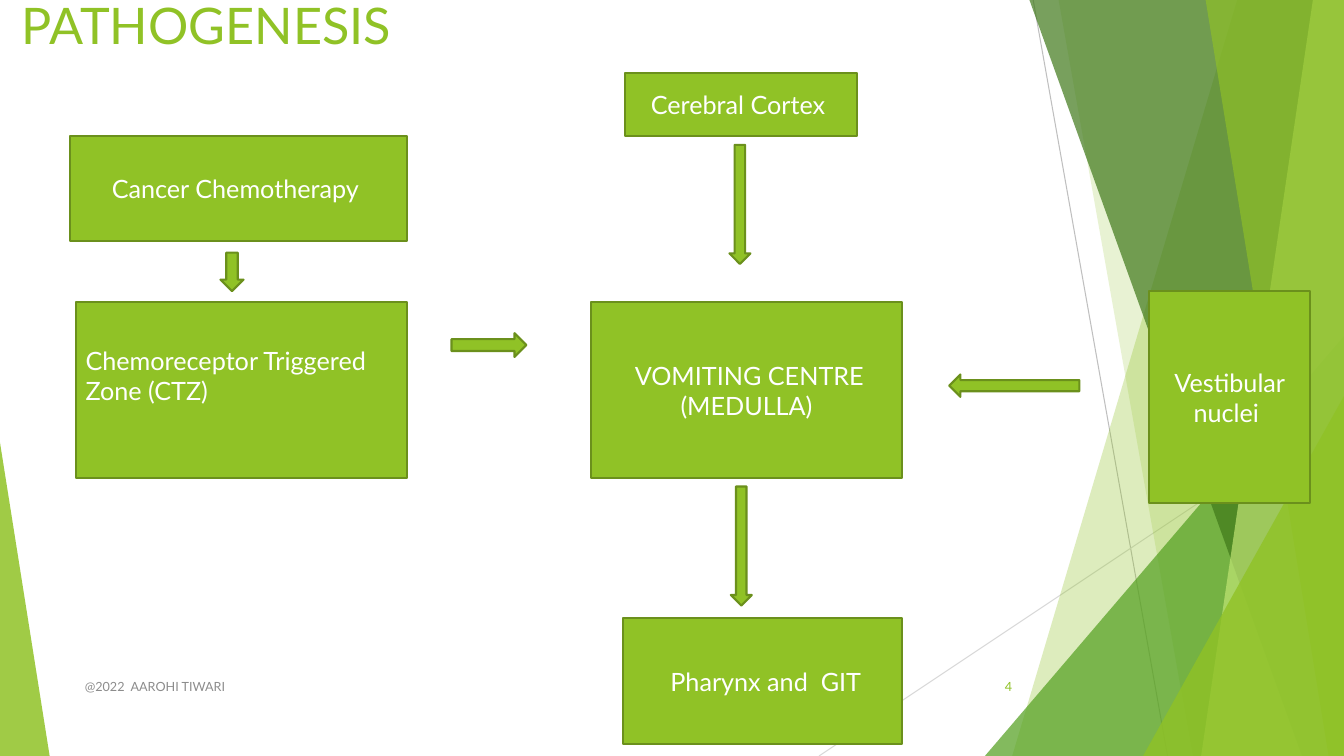
import pptx
import pptx.util
import pptx.dml.color
import pptx.enum.shapes
import pptx.enum.text
import pptx.oxml.ns
import lxml.etree

Pt = pptx.util.Pt
RGBColor = pptx.dml.color.RGBColor
Shape = pptx.enum.shapes.MSO_SHAPE
Align = pptx.enum.text.PP_ALIGN
Anchor = pptx.enum.text.MSO_ANCHOR
qn = pptx.oxml.ns.qn

GREEN = RGBColor(0x90, 0xC2, 0x26)
OUTLINE = RGBColor(0x6B, 0x90, 0x1C)
LEAF = RGBColor(0x54, 0xA0, 0x21)
FOREST = RGBColor(0x3F, 0x78, 0x19)
LIME = RGBColor(0xC0, 0xE4, 0x74)
WHITE = RGBColor(0xFF, 0xFF, 0xFF)
GREY = RGBColor(0x8C, 0x8C, 0x8C)
RULE_DARK = RGBColor(0xBF, 0xBF, 0xBF)
RULE_LIGHT = RGBColor(0xD9, 0xD9, 0xD9)


def write(box, lines, size, color, align, anchor):
    frame = box.text_frame
    for name, value in {"word_wrap": True, "vertical_anchor": anchor}.items():
        setattr(frame, name, value)
    for index, line in enumerate(lines):
        para = frame.add_paragraph() if index else frame.paragraphs[0]
        para.alignment = align
        span = para.add_run()
        span.text = line
        span.font.color.rgb = color
        for name, value in {"name": "Lato", "size": Pt(size)}.items():
            setattr(span.font, name, value)


def paint(shape, color, opacity=100):
    shape.shadow.inherit = False
    shape.fill.solid()
    shape.fill.fore_color.rgb = color
    if opacity < 100:
        tint = shape.fill._xPr.find(qn("a:solidFill"))[0]
        lxml.etree.SubElement(tint, qn("a:alpha"), val=str(opacity * 1000))
        shape.line.fill.background()
    else:
        shape.line.color.rgb = OUTLINE
        shape.line.width = Pt(1.5)


deck = pptx.Presentation()
deck.slide_width, deck.slide_height = Pt(960), Pt(540)
page = deck.slides.add_slide(deck.slide_layouts[5])
shapes = page.shapes

rules = [
    (738, 0, 834, 540, RULE_DARK),
    (960, 290, 585, 540, RULE_LIGHT),
]
for x1, y1, x2, y2, color in rules:
    rule = shapes.add_connector(
        pptx.enum.shapes.MSO_CONNECTOR.STRAIGHT, Pt(x1), Pt(y1), Pt(x2), Pt(y2)
    )
    rule.line.color.rgb = color
    rule.line.width = Pt(0.75)
    lxml.etree.SubElement(rule._element.spPr, qn("a:effectLst"))

facets = [
    ("band", (884, 723), GREEN, 30),
    ("band", (756, 852), GREEN, 20),
    ("triangle", (703.5, 240, 256.5, 300, 1), LEAF, 72),
    ("band", (735, 929.5), FOREST, 70),
    ("band", (938, 858), LIME, 70),
    ("band", (861, 949), GREEN, 65),
    ("triangle", (816.5, 283, 143.5, 257, 1), GREEN, 80),
    ("triangle", (0, 316, 35.5, 224, 0), GREEN, 85),
]
for kind, geometry, color, opacity in facets:
    if kind == "band":
        top_x, bottom_x = geometry
        outline = shapes.build_freeform(top_x, -0.6, scale=Pt(1))
        outline.add_line_segments([(960, -0.6), (960, 540), (bottom_x, 540)], close=True)
        facet = outline.convert_to_shape()
    else:
        *frame, apex = geometry
        facet = shapes.add_shape(Shape.ISOSCELES_TRIANGLE, *map(Pt, frame))
        facet.adjustments[0] = apex
    paint(facet, color, opacity)

title = shapes.title
title_place = {"left": Pt(8.5), "top": Pt(-7.5), "width": Pt(828), "height": Pt(104.5)}
for name, value in title_place.items():
    setattr(title, name, value)
write(title, ["PATHOGENESIS"], 36, GREEN, Align.LEFT, Anchor.TOP)

stages = [
    (["Cancer Chemotherapy "], 50, 97, 240.5, 75, Align.CENTER),
    (["Chemoreceptor Triggered Zone (CTZ)"], 54, 216, 237, 125.5, Align.LEFT),
    (["Cerebral Cortex "], 446.5, 52, 166, 45, Align.CENTER),
    ([" VOMITING CENTRE", "(MEDULLA)"], 422, 216, 222.5, 125.5, Align.CENTER),
    (["Vestibular nuclei "], 820.5, 208, 115.5, 151.5, Align.CENTER),
    ([" Pharynx and  GIT"], 445, 441.5, 199.5, 90, Align.CENTER),
]
for lines, left, top, width, height, align in stages:
    box = shapes.add_shape(Shape.RECTANGLE, Pt(left), Pt(top), Pt(width), Pt(height))
    paint(box, GREEN)
    write(box, lines, 18, WHITE, align, Anchor.MIDDLE)
    if align == Align.LEFT:
        box.text_frame.margin_bottom = Pt(25.2)

arrows = [
    (Shape.DOWN_ARROW, 157.5, 180.5, 16.5, 27.5),
    (Shape.RIGHT_ARROW, 322.5, 238, 53.5, 17),
    (Shape.DOWN_ARROW, 521, 103.5, 15, 85),
    (Shape.DOWN_ARROW, 522, 347.5, 15, 85),
    (Shape.LEFT_ARROW, 678, 267.5, 93, 16),
]
for kind, *frame in arrows:
    paint(shapes.add_shape(kind, *map(Pt, frame)), GREEN)

footers = [
    ("@2022  AAROHI TIWARI", 53.5, 496, GREY, Align.LEFT),
    ("4", 676, 54, GREEN, Align.RIGHT),
]
for text, left, width, color, align in footers:
    box = shapes.add_textbox(Pt(left), Pt(476), Pt(width), Pt(29))
    write(box, [text], 9, color, align, Anchor.MIDDLE)

deck.save("out.pptx")
